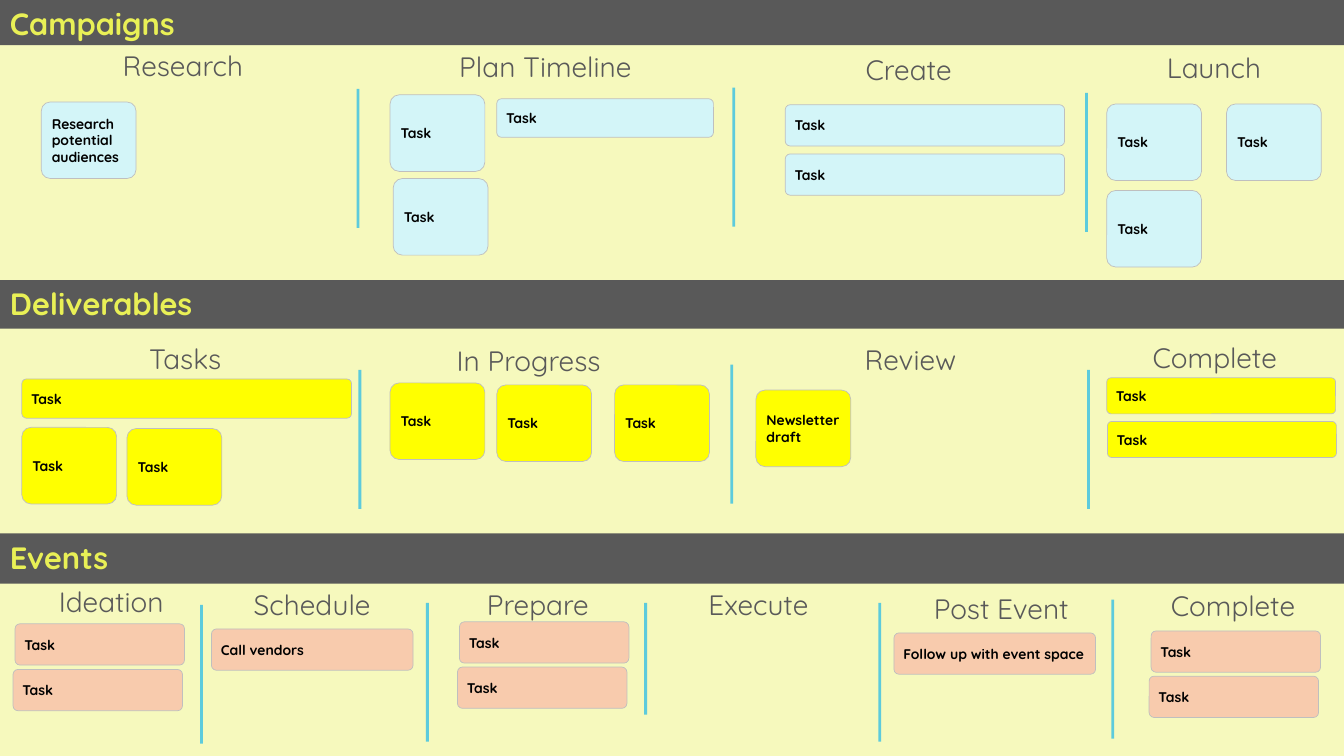
from lxml import etree
from pptx import Presentation
from pptx import util as u
from pptx.dml import color as col
from pptx.enum import shapes, text
from pptx.oxml import ns

WIDE, HIGH = 33.87, 19.05
GRAY, LIME, BLUE = "595959", "E9F056", "00B0F0"
HEAD = {"name": "Quicksand", "size": u.Pt(20), "bold": False}
TITLE = {"name": "Quicksand", "size": u.Pt(22), "bold": True}
NOTE = {"name": "Quicksand", "size": u.Pt(10), "bold": True}
INSETS = {"margin_left": u.Cm(0.2), "margin_top": u.Cm(0.13),
          "margin_right": u.Cm(0.13), "margin_bottom": u.Cm(0.13),
          "vertical_anchor": text.MSO_ANCHOR.MIDDLE}

# Card sizes
SQUARE = (2.39, 1.93)
PLAN, CREATE = (5.46, 0.97), (7.04, 1.04)
TASKS, DONE = (8.31, 0.99), (5.77, 0.91)
SHORT, LONG = (4.27, 1.04), (5.08, 1.04)

# Boards: title, top, bar height, card colour, columns
# Column: heading, (left, top, width), divider (left, top, length), cards
# Card: label, left, top, size; tops are measured from the board's top
BOARDS = [
    ("Campaigns", 0, 1.14, "D3F5F8", [
        ("Research", (0.15, 1.09, 8.92), (9.02, 2.24, 3.5),
         [("Research potential audiences", 1.04, 2.57, SQUARE)]),
        ("Plan Timeline", (9.02, 1.12, 9.45), (18.49, 2.21, 3.5),
         [("Task", 9.83, 2.39, SQUARE), ("Task", 12.52, 2.49, PLAN),
          ("Task", 9.91, 4.5, SQUARE)]),
        ("Create", (18.44, 1.19, 8.92), (27.38, 2.34, 3.5),
         [("Task", 19.79, 2.64, CREATE), ("Task", 19.79, 3.88, CREATE)]),
        ("Launch", (27.89, 1.14, 5.41), None,
         [("Task", 27.89, 2.62, SQUARE), ("Task", 30.91, 2.62, SQUARE),
          ("Task", 27.89, 4.8, SQUARE)]),
    ]),
    ("Deliverables", 7.06, 1.22, "FFFF00", [
        ("Tasks", (0.3, 1.42, 8.74), (9.07, 2.26, 3.5),
         [("Task", 0.55, 2.49, TASKS), ("Task", 0.55, 3.71, SQUARE),
          ("Task", 3.2, 3.74, SQUARE)]),
        ("In Progress", (10.62, 1.46, 5.41), (18.44, 2.13, 3.5),
         [("Task", 9.83, 2.59, SQUARE), ("Task", 12.52, 2.64, SQUARE),
          ("Task", 15.49, 2.64, SQUARE)]),
        ("Review", (20.24, 1.45, 5.41), (27.43, 2.26, 3.5),
         [("Newsletter draft", 19.05, 2.77, SQUARE)]),
        ("Complete", (27.91, 1.4, 5.41), None,
         [("Task", 27.89, 2.46, DONE), ("Task", 27.91, 3.56, DONE)]),
    ]),
    ("Events", 13.44, 1.27, "F8CBAD", [
        ("Ideation", (0, 1.17, 5.61), (5.08, 1.8, 3.5),
         [("Task", 0.38, 2.28, SHORT), ("Task", 0.33, 3.43, SHORT)]),
        ("Schedule", (5.16, 1.24, 5.41), (10.77, 1.75, 3.5),
         [("Call vendors", 5.33, 2.41, LONG)]),
        ("Prepare", (10.85, 1.24, 5.41), (16.27, 1.75, 2.82),
         [("Task", 11.58, 2.23, SHORT), ("Task", 11.53, 3.37, SHORT)]),
        ("Execute", (16.79, 1.24, 4.65), (22.17, 1.75, 3.5), []),
        ("Post Event", (22.53, 1.34, 5.41), (28.04, 1.67, 3.5),
         [("Follow up with event space", 22.53, 2.51, LONG)]),
        ("Complete", (28.6, 1.27, 4.95), None,
         [("Task", 29.01, 2.46, SHORT), ("Task", 28.96, 3.6, SHORT)]),
    ]),
]


def rgb(code):
    return col.RGBColor.from_string(code)


def put(target, values):
    for key, value in values.items():
        setattr(target, key, value)


def fade(root, share):
    """Make the solid colour under root partly see-through."""
    tone = next(root.iter(ns.qn("a:srgbClr")))
    etree.SubElement(tone, ns.qn("a:alpha")).set("val", str(share * 1000))


def write(frame, words, look, tint, align=text.PP_ALIGN.LEFT):
    frame.word_wrap = True
    para = frame.paragraphs[0]
    para.alignment = align
    run = para.add_run()
    run.text = words
    put(run.font, look)
    run.font.color.rgb = rgb(tint)


def label(slide, box, *style):
    area = slide.shapes.add_textbox(*map(u.Cm, box))
    write(area.text_frame, *style)


def block(slide, kind, box, fill):
    shape = slide.shapes.add_shape(kind, *map(u.Cm, box))
    shape.shadow.inherit = False
    shape.fill.solid()
    shape.fill.fore_color.rgb = rgb(fill)
    shape.line.fill.background()
    return shape


def card(slide, box, words, fill):
    shape = block(slide, shapes.MSO_SHAPE.ROUNDED_RECTANGLE, box, fill)
    shape.adjustments[0] = 0.12
    shape.line.color.rgb = rgb("BFBFBF")
    shape.line.width = u.Pt(0.5)
    put(shape.text_frame, INSETS)
    write(shape.text_frame, words, NOTE, "000000")


def rule(slide, left, top, size):
    line = slide.shapes.add_connector(
        shapes.MSO_CONNECTOR.STRAIGHT,
        *map(u.Cm, (left, top, left, top + size)))
    line.line.color.rgb = rgb(BLUE)
    line.line.width = u.Pt(2)
    props = line._element.spPr
    fade(props, 62)
    etree.SubElement(props, ns.qn("a:effectLst"))


def board(slide, box, title, bar, fill, columns):
    left, top, width = box
    # Title bar
    block(slide, shapes.MSO_SHAPE.RECTANGLE, (left, top, width, bar), GRAY)
    label(slide, (left, top, 13.4, 1.19), title, TITLE, LIME)
    # Columns with their headings, dividers and cards
    for name, (x, y, wide), split, cards in columns:
        label(slide, (left + x, top + y, wide, 1.12), name, HEAD, GRAY,
              text.PP_ALIGN.CENTER)
        if split:
            x, y, size = split
            rule(slide, left + x, top + y, size)
        for words, x, y, size in cards:
            card(slide, (left + x, top + y, *size), words, fill)


def main():
    deck = Presentation()
    put(deck, {"slide_width": u.Cm(WIDE), "slide_height": u.Cm(HIGH)})
    slide = deck.slides.add_slide(deck.slide_layouts[6])
    # Pale background
    back = slide.background.fill
    back.solid()
    back.fore_color.rgb = rgb(LIME)
    fade(slide._element, 39)
    # Three boards
    for title, top, bar, fill, columns in BOARDS:
        board(slide, (0, top, WIDE), title, bar, fill, columns)
    deck.save("out.pptx")


if __name__ == "__main__":
    main()
